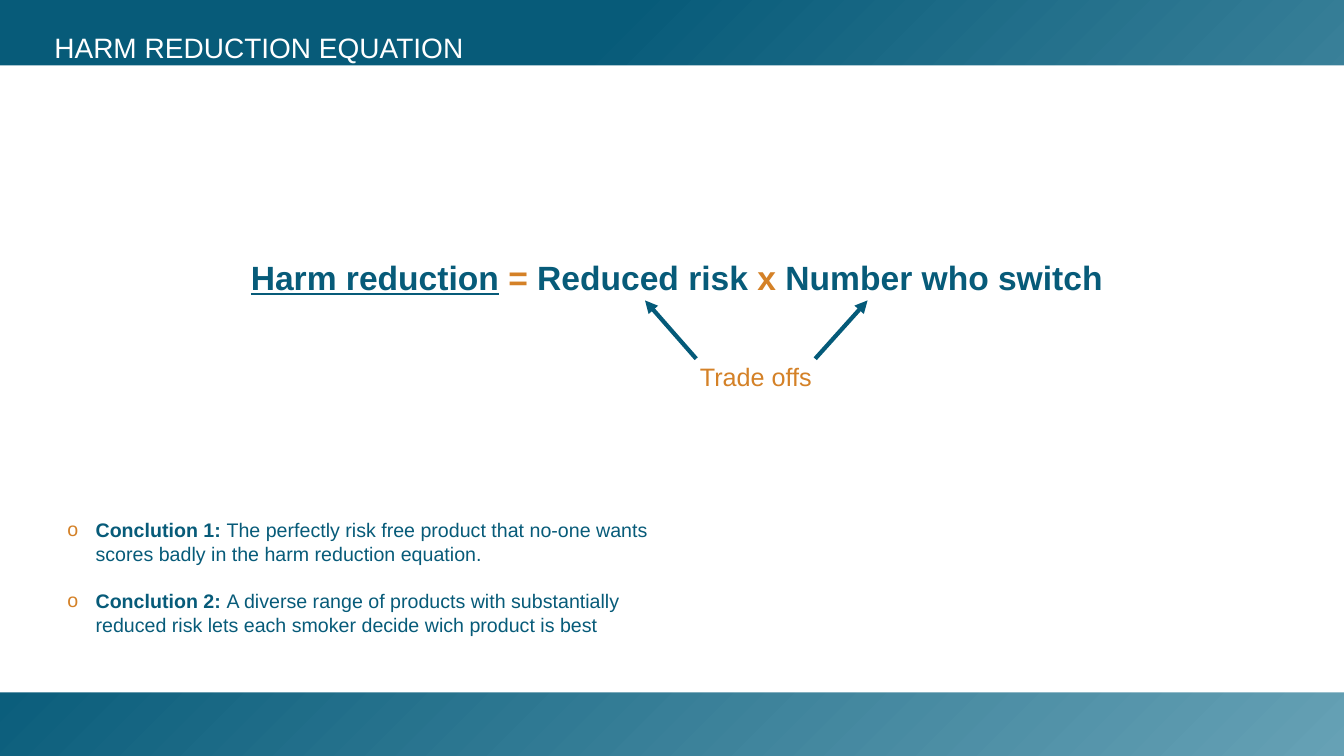
"""Build the harm reduction equation slide."""
from lxml.etree import SubElement
from pptx import Presentation
from pptx.dml.color import RGBColor
from pptx.enum.shapes import MSO_CONNECTOR as Connector, MSO_SHAPE as Preset
from pptx.enum.text import MSO_ANCHOR as Anchor, MSO_AUTO_SIZE as AutoSize, PP_ALIGN as Align
from pptx.oxml.ns import qn
from pptx.util import Cm, Pt

TEAL, LIGHT_TEAL, ARROW_TEAL = "075B79", "66A1B5", "045A79"
ORANGE, WHITE = "D48127", "FFFFFF"
WIDTH, HEIGHT = 33.88, 19.05

TITLE = [[("HARM REDUCTION EQUATION", {})]]
EQUATION = [[
    ("Harm reduction", {"underline": True}),
    (" ", {}),
    ("=", {"color": ORANGE}),
    (" Reduced risk ", {}),
    ("x", {"color": ORANGE}),
    (" Number who switch", {}),
]]
TRADE_OFFS = [[("Trade offs", {})]]
CONCLUSIONS = [
    [("Conclution 1: ", {"bold": True}),
     ("The perfectly risk free product that no-one wants scores badly in the "
      "harm reduction equation.", {})],
    [("Conclution 2: ", {"bold": True}),
     ("A diverse range of products with substantially reduced risk lets each "
      "smoker decide wich product is best", {})],
]
ARROWS = [((17.55, 9.04), (16.26, 7.57)), ((20.55, 9.04), (21.87, 7.57))]


def rgb(value):
    return RGBColor.from_string(value)


def set_bullet(paragraph, color, indent):
    properties = paragraph._p.get_or_add_pPr()
    properties.set("marL", str(Cm(indent)))
    properties.set("indent", str(-Cm(indent)))
    if color:
        bullet_color = SubElement(properties, qn("a:buClr"))
        SubElement(bullet_color, qn("a:srgbClr"), val=color)
        SubElement(properties, qn("a:buChar"), char="o")
    else:
        SubElement(properties, qn("a:buNone"))


def write_text(shape, box, paragraphs, size, color, bold=False, align=Align.LEFT,
               anchor=Anchor.TOP, insets=(0.25, 0.13), line_spacing=1.0, gap=0,
               bullet=None, indent=0):
    shape.left, shape.top, shape.width, shape.height = map(Cm, box)
    frame = shape.text_frame
    frame.word_wrap, frame.auto_size = True, AutoSize.NONE
    frame.vertical_anchor = anchor
    frame.margin_left = frame.margin_right = Cm(insets[0])
    frame.margin_top = frame.margin_bottom = Cm(insets[1])
    for index, runs in enumerate(paragraphs):
        paragraph = frame.add_paragraph() if index else frame.paragraphs[0]
        set_bullet(paragraph, bullet, indent)
        paragraph.alignment = align
        paragraph.line_spacing = line_spacing
        paragraph.space_before = Pt(gap if index else 0)
        for text, style in runs:
            run = paragraph.add_run()
            run.text = text
            font = run.font
            font.name, font.size = "Arial", Pt(size)
            font.bold = style.get("bold", bold)
            font.underline = style.get("underline", False)
            font.color.rgb = rgb(style.get("color", color))


def add_panel(slide, top, height):
    panel = slide.shapes.add_shape(Preset.RECTANGLE, 0, Cm(top), Cm(WIDTH), Cm(height))
    panel.shadow.inherit = False
    panel.line.fill.background()
    slide.shapes.title.element.addprevious(panel.element)
    return panel.fill


def add_arrow(slide, start, end):
    arrow = slide.shapes.add_connector(Connector.STRAIGHT, *map(Cm, start + end))
    arrow.line.color.rgb = rgb(ARROW_TEAL)
    arrow.line.width = Pt(3)
    SubElement(arrow.line._get_or_add_ln(), qn("a:tailEnd"), type="triangle")
    SubElement(arrow.element.spPr, qn("a:effectLst"))


def main():
    presentation = Presentation()
    presentation.slide_width, presentation.slide_height = Cm(WIDTH), Cm(HEIGHT)
    slide = presentation.slides.add_slide(presentation.slide_layouts[3])
    title, equation, conclusions = slide.placeholders

    background = add_panel(slide, 0, HEIGHT)
    background.gradient()
    background.gradient_angle = 315
    for stop, position, color in zip(background.gradient_stops, (0.3, 1), (TEAL, LIGHT_TEAL)):
        stop.position, stop.color.rgb = position, rgb(color)
    content_area = add_panel(slide, 1.65, 15.8)
    content_area.solid()
    content_area.fore_color.rgb = rgb(WHITE)

    write_text(title, (1.04, 0.61, 31.98, 1.19), TITLE, 20, WHITE,
               anchor=Anchor.BOTTOM, insets=(0.33, 0.18), line_spacing=0.8)
    write_text(equation, (1.07, 2.34, 31.98, 9.27), EQUATION, 24, TEAL, bold=True,
               align=Align.CENTER, anchor=Anchor.MIDDLE, insets=(0.33, 0.18))
    for start, end in ARROWS:
        add_arrow(slide, start, end)
    trade_offs = slide.shapes.add_textbox(0, 0, 0, 0)
    write_text(trade_offs, (17.25, 8.97, 3.61, 0.94), TRADE_OFFS, 18, ORANGE,
               align=Align.CENTER)
    write_text(conclusions, (1.45, 12.93, 15.49, 3.89), CONCLUSIONS, 14, TEAL,
               gap=17, bullet=ORANGE, indent=0.71)
    presentation.save("out.pptx")


if __name__ == "__main__":
    main()
